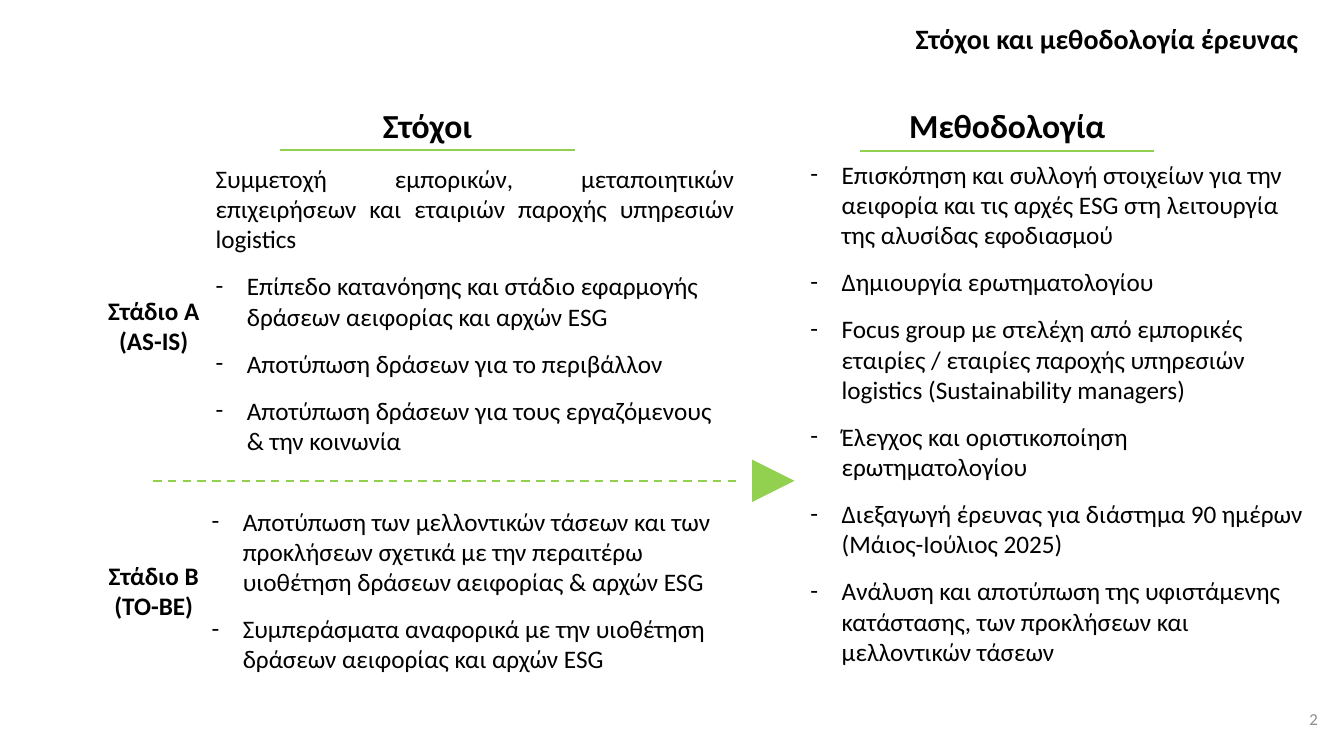
from lxml import etree
from pptx import Presentation
from pptx.dml.color import RGBColor
from pptx.enum.dml import MSO_LINE
from pptx.enum.shapes import MSO_CONNECTOR, MSO_SHAPE
from pptx.enum.text import MSO_ANCHOR, MSO_AUTO_SIZE, PP_ALIGN
from pptx.oxml.ns import qn
from pptx.util import Inches, Pt

LEFT, CENTER, RIGHT, JUSTIFY = PP_ALIGN.LEFT, PP_ALIGN.CENTER, PP_ALIGN.RIGHT, PP_ALIGN.JUSTIFY
TOP, MIDDLE = MSO_ANCHOR.TOP, MSO_ANCHOR.MIDDLE
GROW, FIXED = MSO_AUTO_SIZE.SHAPE_TO_FIT_TEXT, MSO_AUTO_SIZE.NONE
STRAIGHT, DASH, EXTRACT = MSO_CONNECTOR.STRAIGHT, MSO_LINE.DASH, MSO_SHAPE.FLOWCHART_EXTRACT

FONT = "Calibri"
COLORS = {"text": "000000", "green": "92D050", "number": "8C8C8C"}
INDENT = Inches(0.31)

TITLE = "Στόχοι και μεθοδολογία έρευνας "
HEADINGS = [("Στόχοι", 2.78, 1.49), ("Μεθοδολογία", 8.53, 1.5)]
HEADING_WIDTH = 2.92
STAGES = [(["Στάδιο Α", "(AS-IS)"], 2.88), (["Στάδιο Β", "(TO-BE)"], 5.51)]
INTRO = "Συμμετοχή εμπορικών, μεταποιητικών επιχειρήσεων και εταιριών παροχής υπηρεσιών logistics"
BODIES = [
    ((2.04, 1.57, 5.34, 3.03), [INTRO], [
        "Επίπεδο κατανόησης και στάδιο εφαρμογής δράσεων αειφορίας και αρχών ESG",
        "Αποτύπωση δράσεων για το περιβάλλον",
        "Αποτύπωση δράσεων για τους εργαζόμενους & την κοινωνία",
    ]),
    ((2, 4.97, 5.21, 1.78), [], [
        "Αποτύπωση των μελλοντικών τάσεων και των προκλήσεων σχετικά με την περαιτέρω "
        "υιοθέτηση δράσεων αειφορίας & αρχών ESG",
        "Συμπεράσματα αναφορικά με την υιοθέτηση δράσεων αειφορίας και αρχών ESG",
    ]),
    ((7.94, 1.53, 5.1, 5.18), [], [
        "Επισκόπηση και συλλογή στοιχείων για την αειφορία και τις αρχές ESG στη λειτουργία "
        "της αλυσίδας εφοδιασμού",
        "Δημιουργία ερωτηματολογίου",
        "Focus group με στελέχη από εμπορικές εταιρίες / εταιρίες παροχής υπηρεσιών logistics "
        "(Sustainability managers)",
        "Έλεγχος και οριστικοποίηση ερωτηματολογίου",
        "Διεξαγωγή έρευνας για διάστημα 90 ημέρων (Μάιος-Ιούλιος 2025)",
        "Ανάλυση και αποτύπωση της υφιστάμενης κατάστασης, των προκλήσεων και μελλοντικών τάσεων",
    ]),
]


def rgb(name):
    return RGBColor.from_string(COLORS[name])


def write(sp, lines, size, align, bold=False, color="text", anchor=TOP, fit=GROW):
    tf = sp.text_frame
    tf.word_wrap = True
    tf.auto_size = fit
    tf.vertical_anchor = anchor
    tf.text = "\n".join(lines)
    for p in tf.paragraphs:
        p.alignment = align
        for r in p.runs:
            r.font.name = FONT
            r.font.size = Pt(size)
            r.font.bold = bold
            r.font.color.rgb = rgb(color)
    return tf


def add_text(s, box, *args, **kwargs):
    return write(s.shapes.add_textbox(*map(Inches, box)), *args, **kwargs)


def add_dash(p):
    pPr = p._p.get_or_add_pPr()
    pPr.set("marL", str(INDENT))
    pPr.set("indent", str(-INDENT))
    etree.SubElement(pPr, qn("a:buFont")).set("typeface", FONT)
    etree.SubElement(pPr, qn("a:buChar")).set("char", "-")


def add_line(s, x1, x2, y, dash=None):
    line = s.shapes.add_connector(STRAIGHT, *map(Inches, (x1, y, x2, y)))
    line.line.color.rgb = rgb("green")
    line.line.width = Pt(1.5)
    if dash:
        line.line.dash_style = dash
    etree.SubElement(line._element.spPr, qn("a:effectLst"))


def main():
    prs = Presentation()
    prs.slide_width, prs.slide_height = Inches(13.33), Inches(7.5)
    s = prs.slides.add_slide(prs.slide_layouts[5])

    title = s.shapes.title
    title.left, title.top, title.width, title.height = map(Inches, (1.7, 0.16, 11.34, 0.44))
    write(title, [TITLE], 20, RIGHT, bold=True)

    for heading, x, y in HEADINGS:
        add_line(s, x, x + HEADING_WIDTH, y)
        add_text(s, (x, 0.99, HEADING_WIDTH, 0.5), [heading], 24, CENTER, bold=True)

    for lines, y in STAGES:
        add_text(s, (0.84, y, 1.37, 0.71), lines, 18, CENTER, bold=True)

    for box, intro, items in BODIES:
        tf = add_text(s, box, intro + items, 18, LEFT)
        for i, p in enumerate(tf.paragraphs):
            p.space_after = Pt(12)
            if i < len(intro):
                p.alignment = JUSTIFY
            else:
                add_dash(p)

    add_line(s, 1.52, 7.35, 4.77, DASH)
    arrow = s.shapes.add_shape(EXTRACT, *map(Inches, (7.46, 4.56, 0.42, 0.42)))
    arrow.rotation = 90
    arrow.shadow.inherit = False
    arrow.fill.solid()
    arrow.fill.fore_color.rgb = rgb("green")
    arrow.line.fill.background()

    add_text(s, (10.84, 6.93, 2.33, 0.4), ["2"], 12, RIGHT, color="number", anchor=MIDDLE, fit=FIXED)
    prs.save("out.pptx")


if __name__ == "__main__":
    main()
